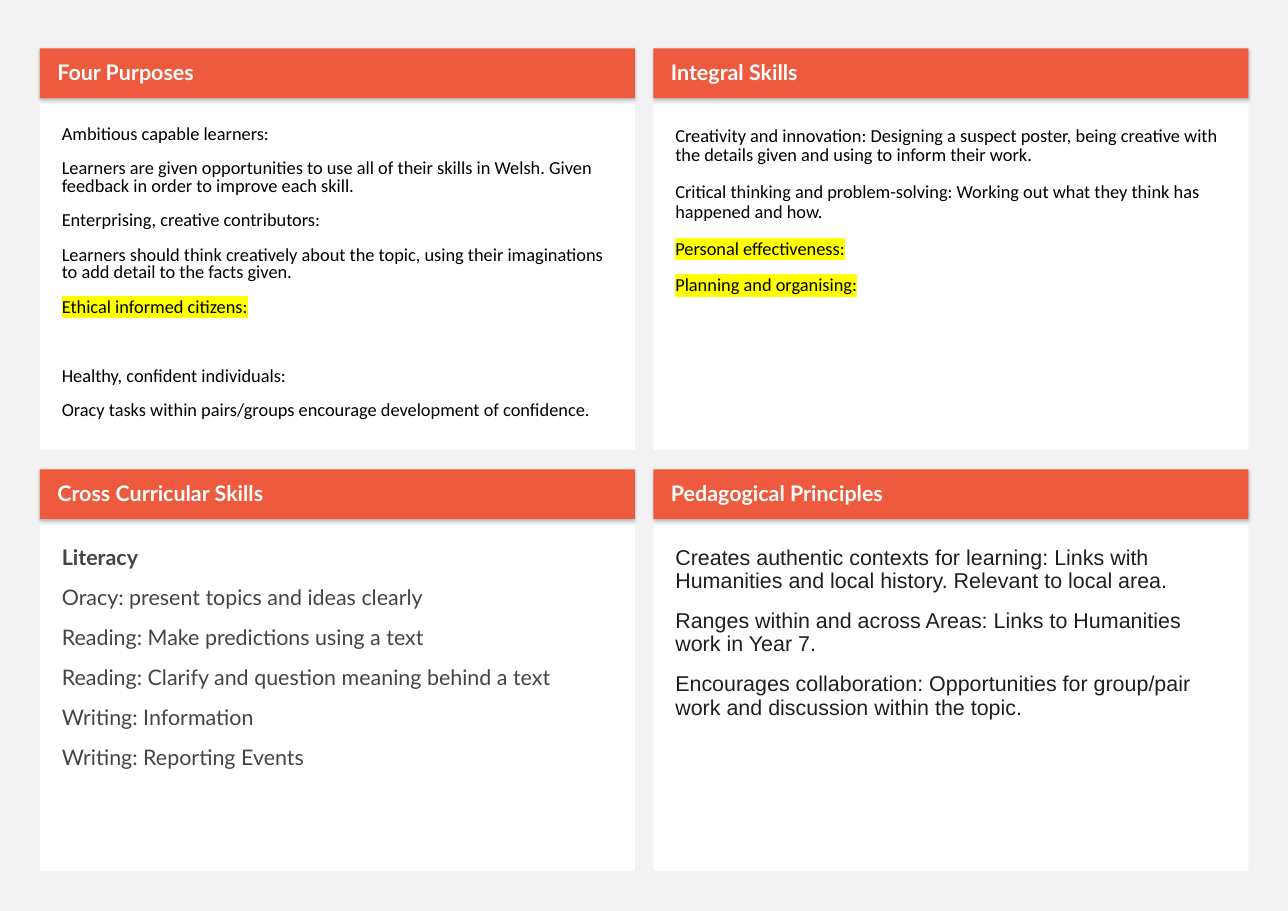
import copy

import pptx
import pptx.dml.color
import pptx.enum.text
import pptx.oxml
import pptx.oxml.ns
import pptx.util

Pt = pptx.util.Pt
RGBColor = pptx.dml.color.RGBColor
ANCHOR = pptx.enum.text.MSO_ANCHOR

PAGE = RGBColor(0xF2, 0xF2, 0xF2)
ORANGE = RGBColor(0xED, 0x5A, 0x3E)
WHITE = RGBColor(0xFF, 0xFF, 0xFF)
BLACK = RGBColor(0x00, 0x00, 0x00)
GREY = RGBColor(0x44, 0x44, 0x44)
DARK = RGBColor(0x1F, 0x1F, 0x1F)
YELLOW = RGBColor(0xFF, 0xFF, 0x00)

HEADING = {"name": "Lato", "size": Pt(14), "bold": True}
SMALL = {"name": "Calibri", "size": Pt(12), "bold": False}
LATO = {"name": "Lato", "size": Pt(14), "bold": False}
ARIAL = {"name": "Arial", "size": Pt(14), "bold": False}

PANELS = [
    ("Four Purposes", SMALL, BLACK, 0.8, [
        "Ambitious capable learners:",
        "Learners are given opportunities to use all of their skills in Welsh. Given feedback in order to improve each skill.",
        "Enterprising, creative contributors:",
        "Learners should think creatively about the topic, using their imaginations to add detail to the facts given.",
        "Ethical informed citizens:",
        "Healthy, confident individuals:",
        "Oracy tasks within pairs/groups encourage development of confidence.",
    ]),
    ("Integral Skills", SMALL, BLACK, 0.9, [
        "Creativity and innovation: Designing a suspect poster, being creative with the details given and using to inform their work.",
        "Critical thinking and problem-solving: Working out what they think has happened and how.",
        "Personal effectiveness:",
        "Planning and organising:",
    ]),
    ("Cross Curricular Skills", LATO, GREY, 0.9, [
        "Literacy",
        "Oracy: present topics and ideas clearly",
        "Reading: Make predictions using a text",
        "Reading: Clarify and question meaning behind a text",
        "Writing: Information",
        "Writing: Reporting Events",
    ]),
    ("Pedagogical Principles", ARIAL, DARK, 0.9, [
        "Creates authentic contexts for learning: Links with Humanities and local history. Relevant to local area.",
        "Ranges within and across Areas: Links to Humanities work in Year 7.",
        "Encourages collaboration: Opportunities for group/pair work and discussion within the topic.",
    ]),
]
HIGHLIGHTED = {"Ethical informed citizens:", "Personal effectiveness:", "Planning and organising:"}
BOLD = {"Literacy"}
SPACE_BEFORE = {"Healthy, confident individuals:": 33.5}

LEFT, TOP = 26, 31.7
COLUMN_STEP, ROW_STEP = 401, 275
WIDTH, HEADER_HEIGHT, BODY_HEIGHT = 389, 32.4, 226
BODY_OFFSET = 36.4
HEADER_INSETS = (11.5, 3.6, 7.2, 3.6)
BODY_INSETS = (14.4, 14.4, 14.4, 14.4)

SHADOW = (
    '<a:effectLst %s><a:outerShdw blurRad="25400" dist="12700" dir="5400000">'
    '<a:srgbClr val="000000"><a:alpha val="25000"/></a:srgbClr>'
    "</a:outerShdw></a:effectLst>" % pptx.oxml.ns.nsdecls("a")
)
HIGHLIGHT = '<a:highlight %s><a:srgbClr val="%s"/></a:highlight>' % (
    pptx.oxml.ns.nsdecls("a"), YELLOW)


def set_all(target, values):
    for name, value in values.items():
        setattr(target, name, value)


def prepare_layout(layout, count):
    model = copy.deepcopy(layout.placeholders[1].element)
    for ph in list(layout.placeholders):
        ph.element.getparent().remove(ph.element)
    for i in range(count):
        el = copy.deepcopy(model)
        el.xpath(".//p:cNvPr")[0].set("id", str(20 + i))
        el.xpath(".//p:ph")[0].set("idx", str(20 + i))
        layout.shapes.element.append(el)


def fill_box(sp, box, fill, insets, anchor, lines, font, color, line_spacing):
    set_all(sp, dict(zip(("left", "top", "width", "height"), map(Pt, box))))
    sp.fill.solid()
    sp.fill.fore_color.rgb = fill
    tf = sp.text_frame
    set_all(tf, dict(zip(("margin_left", "margin_top", "margin_right", "margin_bottom"),
                         map(Pt, insets))))
    set_all(tf, {"word_wrap": True, "vertical_anchor": anchor,
                 "auto_size": pptx.enum.text.MSO_AUTO_SIZE.NONE})
    for i, line in enumerate(lines):
        p = tf.paragraphs[0] if i == 0 else tf.add_paragraph()
        set_all(p, {"line_spacing": line_spacing, "space_after": Pt(0),
                    "space_before": Pt(SPACE_BEFORE.get(line, 11))})
        r = p.add_run()
        r.text = line
        set_all(r.font, font)
        r.font.color.rgb = color
        if line in BOLD:
            r.font.bold = True
        if line in HIGHLIGHTED:
            latin = r.font._element.xpath("a:latin")[0] if hasattr(r.font, "_element") else r._r.xpath("a:rPr/a:latin")[0]
            latin.addprevious(pptx.oxml.parse_xml(HIGHLIGHT))


def main():
    prs = pptx.Presentation()
    set_all(prs, {"slide_width": Pt(841.9), "slide_height": Pt(595.3)})
    layout = prs.slide_layouts[4]
    prepare_layout(layout, 2 * len(PANELS))
    s = prs.slides.add_slide(layout)
    s.background.fill.solid()
    s.background.fill.fore_color.rgb = PAGE

    boxes = list(s.placeholders)
    for i, (title, font, color, line_spacing, lines) in enumerate(PANELS):
        row, column = divmod(i, 2)
        x, y = LEFT + column * COLUMN_STEP, TOP + row * ROW_STEP
        body, header = boxes[2 * i:2 * i + 2]
        fill_box(body, (x, y + BODY_OFFSET, WIDTH, BODY_HEIGHT), WHITE, BODY_INSETS,
                 ANCHOR.TOP, lines, font, color, line_spacing)
        fill_box(header, (x, y, WIDTH, HEADER_HEIGHT), ORANGE, HEADER_INSETS,
                 ANCHOR.MIDDLE, [title], HEADING, WHITE, 0.9)
        header.element.spPr.append(pptx.oxml.parse_xml(SHADOW))
    prs.save("out.pptx")


if __name__ == "__main__":
    main()
